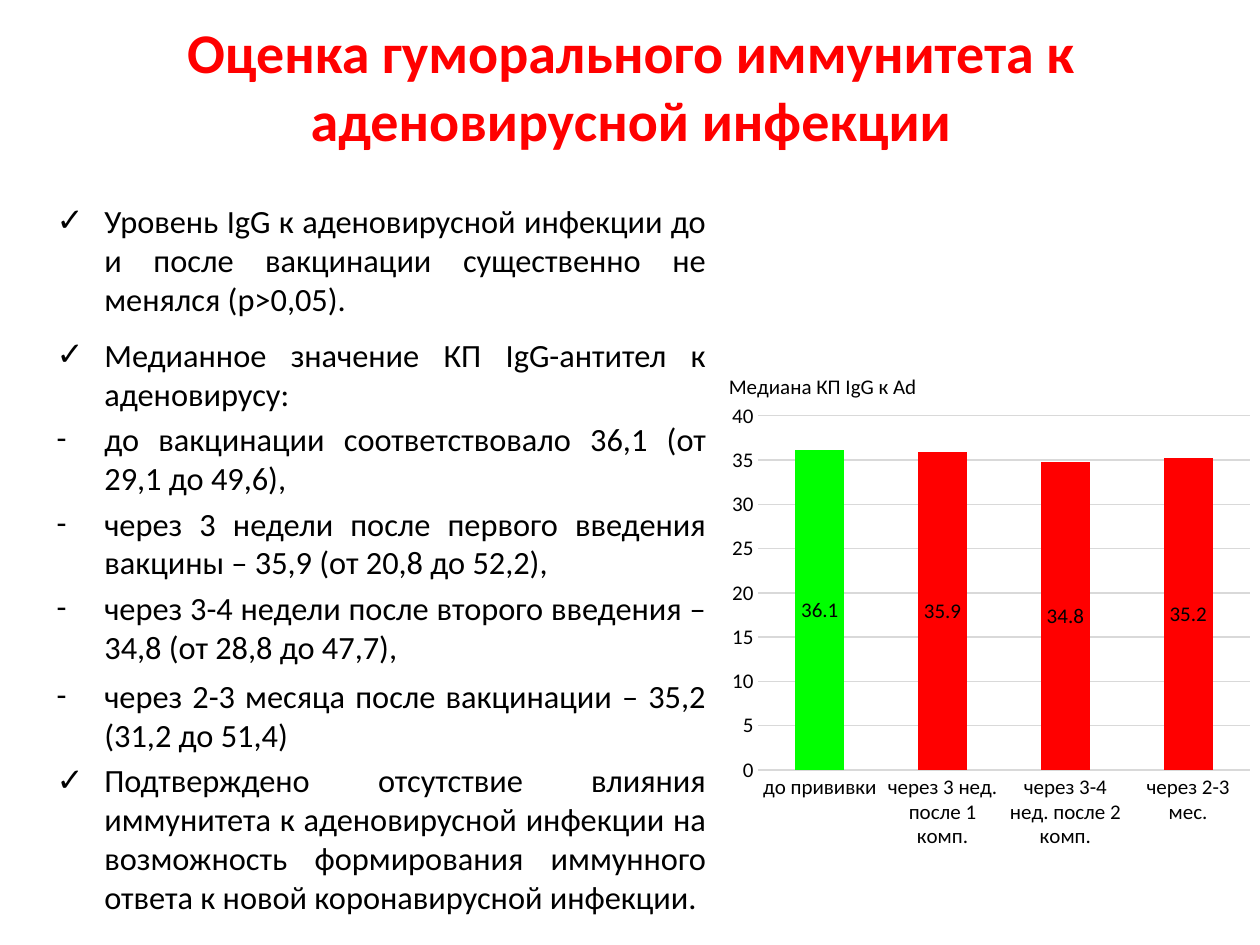
from lxml.etree import SubElement
from pptx import Presentation
from pptx.chart.data import CategoryChartData
from pptx.dml.color import RGBColor
from pptx.enum.chart import XL_CHART_TYPE, XL_LABEL_POSITION, XL_TICK_MARK
from pptx.enum.text import MSO_ANCHOR, PP_ALIGN
from pptx.oxml import parse_xml
from pptx.oxml.ns import nsdecls, qn
from pptx.util import Inches, Pt

RED = RGBColor(0xFF, 0x00, 0x00)
GREEN = RGBColor(0x00, 0xFF, 0x00)
BLACK = RGBColor(0x00, 0x00, 0x00)
GRAY = RGBColor(0xD9, 0xD9, 0xD9)
FONT = "Calibri"

TITLE = "Оценка гуморального иммунитета к аденовирусной инфекции"
CHECK, DASH = "✓", "-"
# Bullet, text, space before and after in points
FINDINGS = [
    (CHECK, "Уровень IgG к аденовирусной инфекции до и после вакцинации "
            "существенно не менялся (р>0,05).", 3.7, 6),
    (CHECK, "Медианное значение КП IgG-антител к аденовирусу:", 3.7, 0),
    (DASH, "до вакцинации соответствовало 36,1 (от 29,1 до 49,6),", 3.7, 0),
    (DASH, "через 3 недели после первого введения вакцины – 35,9 "
           "(от 20,8 до 52,2),", 3.7, 0),
    (DASH, "через 3-4 недели после второго введения – 34,8 "
           "(от 28,8 до 47,7),", 3.7, 0),
    (DASH, "через 2-3 месяца после вакцинации – 35,2 (31,2 до 51,4)", 6, 0),
    (CHECK, "Подтверждено отсутствие влияния иммунитета к аденовирусной "
            "инфекции на возможность формирования иммунного ответа к новой "
            "коронавирусной инфекции.", 3.7, 0),
]
MEDIANS = {
    "до прививки": 36.1,
    "через 3 нед. после 1 комп.": 35.9,
    "через 3-4 нед. после 2 комп.": 34.8,
    "через 2-3 мес.": 35.2,
}


def apply(target, values):
    for name, value in values.items():
        setattr(target, name, value)


def style_font(font, size, color=BLACK, bold=False):
    apply(font, {"name": FONT, "size": Pt(size), "bold": bold})
    font.color.rgb = color


def add_text_frame(page, left, top, width, height, anchor):
    box = page.shapes.add_textbox(
        Inches(left), Inches(top), Inches(width), Inches(height))
    apply(box.text_frame, {"word_wrap": True, "vertical_anchor": anchor})
    return box.text_frame


def add_span(para, text, size, color=BLACK, bold=False):
    span = para.add_run()
    span.text = text
    style_font(span.font, size, color, bold)


def set_bullet(para, symbol):
    properties = para._p.get_or_add_pPr()
    indent = Inches(0.38)
    properties.set("marL", str(indent))
    properties.set("indent", str(-indent))
    SubElement(properties, qn("a:buFont"), typeface=FONT)
    SubElement(properties, qn("a:buChar"), char=symbol)


def add_findings(page):
    frame = add_text_frame(page, 0.35, 1.55, 5.35, 5.83, MSO_ANCHOR.TOP)
    for index, (symbol, text, before, after) in enumerate(FINDINGS):
        para = frame.add_paragraph() if index else frame.paragraphs[0]
        apply(para, {"alignment": PP_ALIGN.JUSTIFY,
                     "space_before": Pt(before), "space_after": Pt(after)})
        set_bullet(para, symbol)
        add_span(para, text, 18.5)


def set_layout(parent, position, places, inner=False):
    """Place a chart part by fractions of the chart area."""
    for old in parent.findall(qn("c:layout")):
        parent.remove(old)
    layout = parse_xml(f"<c:layout {nsdecls('c')}><c:manualLayout/></c:layout>")
    manual = layout[0]
    if inner:
        SubElement(manual, qn("c:layoutTarget"), val="inner")
    for name in ("xMode", "yMode"):
        SubElement(manual, qn(f"c:{name}"), val="edge")
    for name, value in places.items():
        SubElement(manual, qn(f"c:{name}"), val=str(value))
    parent.insert(position, layout)


def style_axis(axis):
    apply(axis, {"major_tick_mark": XL_TICK_MARK.NONE,
                 "minor_tick_mark": XL_TICK_MARK.NONE})
    style_font(axis.tick_labels.font, 12)


def style_line(line):
    line.color.rgb = GRAY
    line.width = Pt(0.75)


def add_median_chart(page):
    data = CategoryChartData()
    data.categories = MEDIANS.keys()
    data.add_series("Series 1", MEDIANS.values())
    chart = page.shapes.add_chart(
        XL_CHART_TYPE.COLUMN_STACKED, Inches(5.71), Inches(2.81),
        Inches(4.42), Inches(3.93), data).chart
    apply(chart, {"has_legend": False, "has_title": False})
    style_font(chart.font, 12)

    # Columns: the value before vaccination stands out
    plot = chart.plots[0]
    apply(plot, {"gap_width": 150, "overlap": 100, "vary_by_categories": False,
                 "has_data_labels": True})
    series = plot.series[0]
    for part, color in ((series, RED), (series.points[0], GREEN)):
        part.format.fill.solid()
        part.format.fill.fore_color.rgb = color
    apply(plot.data_labels, {"show_value": True,
                             "position": XL_LABEL_POSITION.CENTER})
    style_font(plot.data_labels.font, 12)

    # Axes
    categories, values = chart.category_axis, chart.value_axis
    style_axis(categories)
    style_axis(values)
    apply(values, {"minimum_scale": 0, "maximum_scale": 40, "major_unit": 5,
                   "has_major_gridlines": True})
    values.format.line.fill.background()
    style_line(categories.format.line)
    style_line(values.major_gridlines.format.line)

    # Category title moved above the plot
    title = categories.axis_title
    add_span(title.text_frame.paragraphs[0], "Медиана КП IgG к Ad", 12)
    set_layout(title._element, 1, {"x": 0.01, "y": 0.03})
    set_layout(chart._chartSpace.chart.plotArea, 0,
               {"x": 0.07, "y": 0.126, "w": 0.882, "h": 0.722}, inner=True)


def main():
    deck = Presentation()
    apply(deck, {"slide_width": Inches(10), "slide_height": Inches(7.5)})
    page = deck.slides.add_slide(deck.slide_layouts[6])

    # Heading
    para = add_text_frame(
        page, 0.51, 0.05, 9, 1.25, MSO_ANCHOR.MIDDLE).paragraphs[0]
    para.alignment = PP_ALIGN.CENTER
    add_span(para, TITLE, 32, RED, bold=True)

    add_findings(page)
    add_median_chart(page)
    deck.save("out.pptx")


if __name__ == "__main__":
    main()
